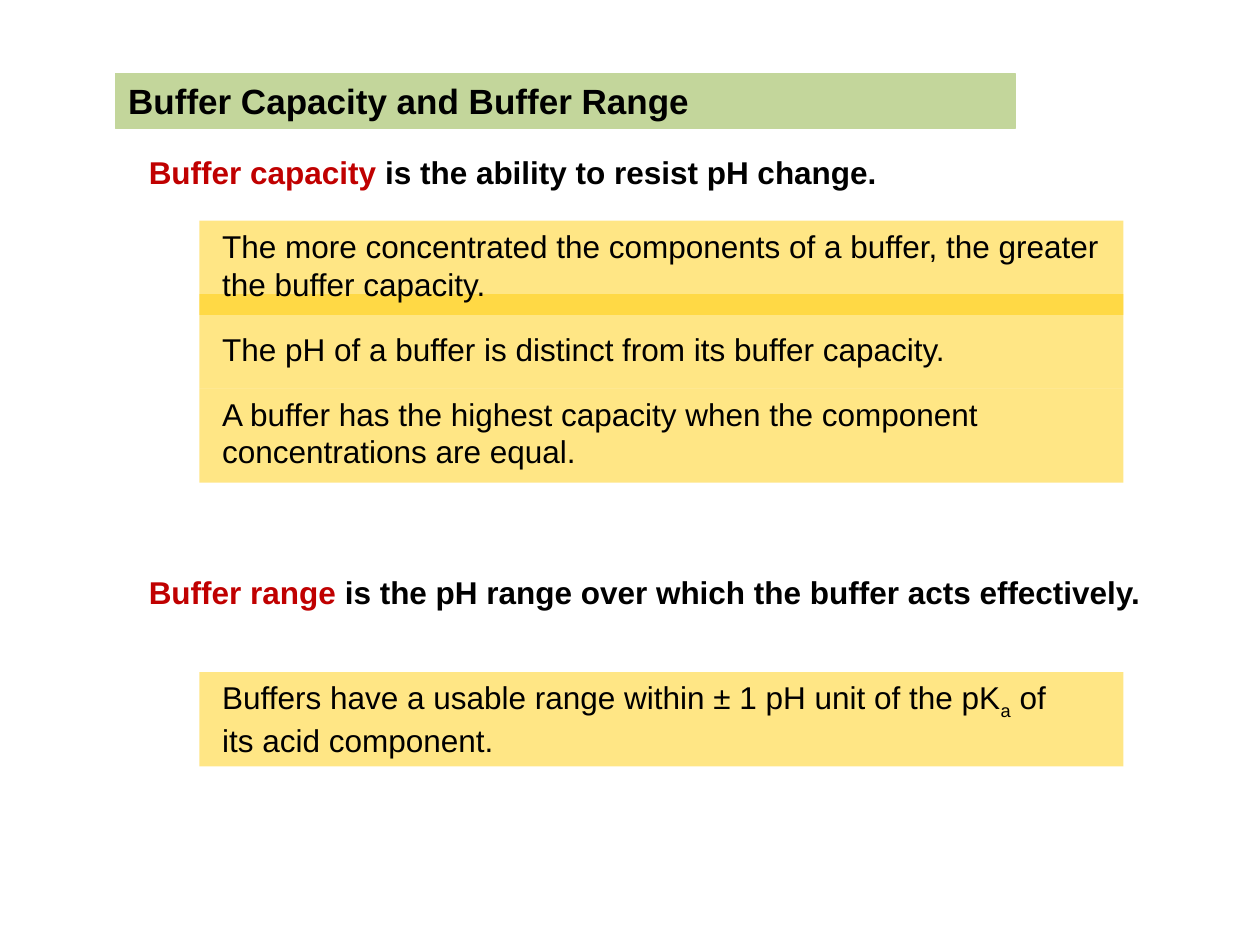
from lxml import etree
from pptx import Presentation
from pptx.dml.color import RGBColor
from pptx.enum.shapes import MSO_SHAPE
from pptx.enum.text import MSO_ANCHOR, MSO_AUTO_SIZE, PP_ALIGN
from pptx.oxml.ns import qn
from pptx.util import Cm, Pt

RECTANGLE = MSO_SHAPE.RECTANGLE
TOP = MSO_ANCHOR.TOP
FIXED = MSO_AUTO_SIZE.NONE
GROW = MSO_AUTO_SIZE.SHAPE_TO_FIT_TEXT
LEFT = PP_ALIGN.LEFT

TITLE_ONLY = 5
BLACK, RED, GREEN, YELLOW = "000000", "C00000", "C3D69B", "FFCC00"
BAND_LEFT, BAND_WIDTH, BAND_HEIGHT = 4.02, 18.63, 1.9
BAND_TOPS = (4.45, 5.93, 7.83, 13.55)
STATEMENT_LEFT, FACT_LEFT = 2.75, 4.23

STATEMENTS = (
    (2.96, 15.19, "Buffer capacity ", "is the ability to resist pH change."),
    (11.43, 20.55, "Buffer range ",
     "is the pH range over which the buffer acts effectively."),
)
FACTS = (
    (4.45, 18.24, (["The more concentrated the components of a buffer, the greater"],
                   ["the buffer capacity."])),
    (6.53, 15.16, (["The pH of a buffer is distinct from its buffer capacity."],)),
    (7.83, 15.98, (["A buffer has the highest capacity when the component"],
                   ["concentrations are equal."])),
    (13.55, 17.17, (["Buffers have a usable range within ± 1 pH unit of the pK", "a", " of"],
                    ["its acid component."])),
)


def color(hex_value):
    return RGBColor.from_string(hex_value)


def style(paragraph, size, bold=False):
    paragraph.font.name = "Arial"
    paragraph.font.size = Pt(size)
    paragraph.font.bold = bold
    paragraph.font.color.rgb = color(BLACK)


def set_title(slide, wording):
    title = slide.shapes.title
    title.left, title.top = Cm(2.33), Cm(1.48)
    title.width, title.height = Cm(18.13), Cm(1.11)
    title.fill.solid()
    title.fill.fore_color.rgb = color(GREEN)
    title.line.color.rgb = color(GREEN)
    title.line.width = Pt(0.75)
    frame = title.text_frame
    frame.text = wording
    frame.vertical_anchor = TOP
    frame.auto_size = FIXED
    frame.paragraphs[0].alignment = LEFT
    style(frame.paragraphs[0], 20, bold=True)


def add_band(slide, top):
    band = slide.shapes.add_shape(
        RECTANGLE, Cm(BAND_LEFT), Cm(top), Cm(BAND_WIDTH), Cm(BAND_HEIGHT))
    band.shadow.inherit = False
    band.fill.solid()
    band.fill.fore_color.rgb = color(YELLOW)
    band.line.fill.background()
    tint = band.fill._xPr.find(qn("a:solidFill"))[0]
    etree.SubElement(tint, qn("a:alpha")).set("val", "48000")


def add_lines(slide, left, top, width, lines, bold=False):
    height = 1.02 if len(lines) == 1 else 1.78
    frame = slide.shapes.add_textbox(
        Cm(left), Cm(top), Cm(width), Cm(height)).text_frame
    frame.word_wrap = False
    frame.auto_size = GROW
    for index, pieces in enumerate(lines):
        paragraph = frame.paragraphs[0] if index == 0 else frame.add_paragraph()
        style(paragraph, 18, bold)
        for piece in pieces:
            paragraph.add_run().text = piece
    return frame


def add_statement(slide, top, width, term, meaning):
    frame = add_lines(slide, STATEMENT_LEFT, top, width, [[term, meaning]], bold=True)
    frame.paragraphs[0].runs[0].font.color.rgb = color(RED)


def lower(run):
    run._r.get_or_add_rPr().set("baseline", "-25000")


def main():
    deck = Presentation()
    deck.slide_width, deck.slide_height = Cm(25.4), Cm(19.05)
    slide = deck.slides.add_slide(deck.slide_layouts[TITLE_ONLY])
    for top in BAND_TOPS:
        add_band(slide, top)
    set_title(slide, "Buffer Capacity and Buffer Range")
    for statement in STATEMENTS:
        add_statement(slide, *statement)
    fact_frames = [add_lines(slide, FACT_LEFT, *fact) for fact in FACTS]
    lower(fact_frames[-1].paragraphs[0].runs[1])
    deck.save("out.pptx")


if __name__ == "__main__":
    main()
